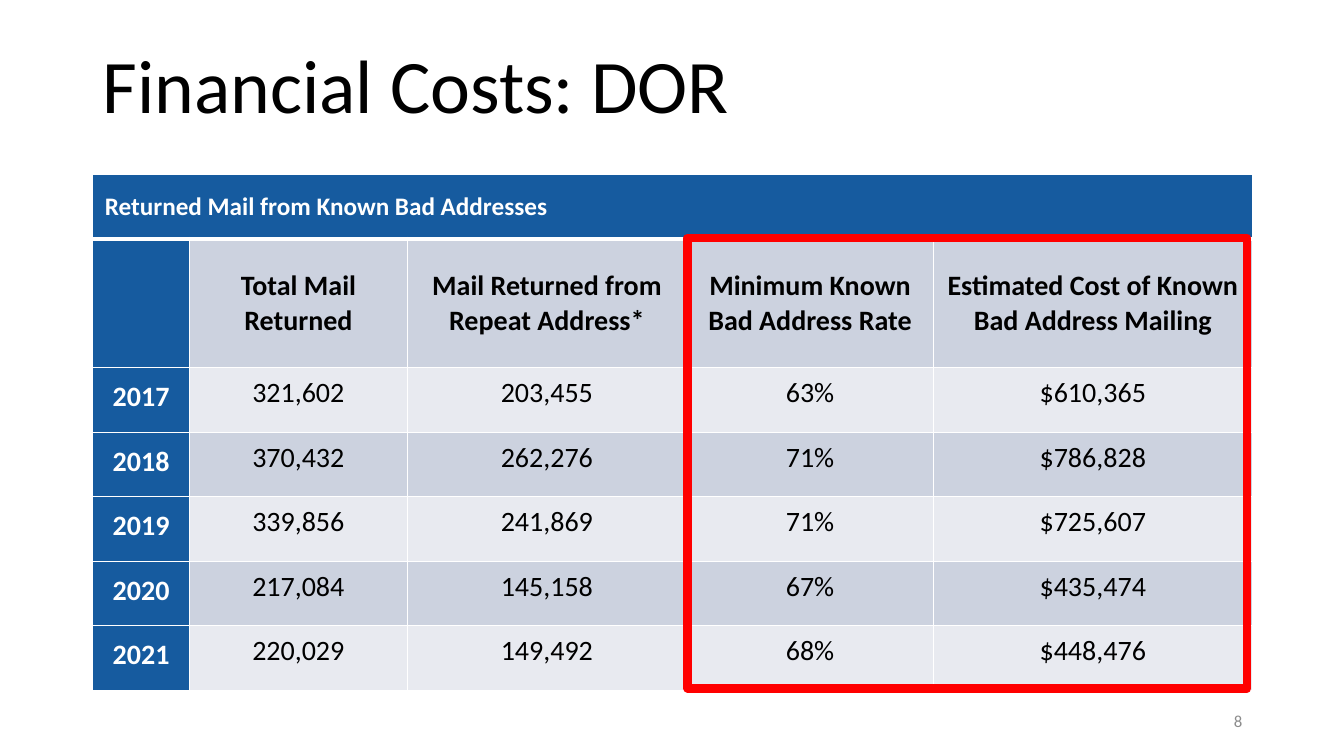
from dataclasses import dataclass

from lxml.etree import SubElement
from pptx import Presentation
from pptx.dml.color import RGBColor
from pptx.enum.shapes import MSO_SHAPE as Preset
from pptx.enum.text import MSO_ANCHOR as Anchor, PP_ALIGN as Align
from pptx.oxml.ns import qn
from pptx.util import Pt

PX = 9144  # EMU per px, 100 px to the inch
FONT = "Calibri"
BLACK = RGBColor(0x00, 0x00, 0x00)
WHITE = RGBColor(0xFF, 0xFF, 0xFF)
GREY = RGBColor(0x8C, 0x8C, 0x8C)
BLUE = RGBColor(0x16, 0x5B, 0x9F)
DARK_BAND = RGBColor(0xCC, 0xD2, 0xDF)
LIGHT_BAND = RGBColor(0xE8, 0xEA, 0xF0)
RED = RGBColor(0xFF, 0x00, 0x00)

COLUMN_WIDTHS = [96, 216, 277, 245, 316]
ROW_HEIGHTS = [64, 128, 64, 64, 64, 64, 64]
TABLE_ROWS = [
    ["Returned Mail from Known Bad Addresses", "", "", "", ""],
    ["", "Total Mail Returned", "Mail Returned from\nRepeat Address*",
     "Minimum Known Bad Address Rate",
     "Estimated Cost of Known Bad Address Mailing"],
    ["2017", "321,602", "203,455", "63%", "$610,365"],
    ["2018", "370,432", "262,276", "71%", "$786,828"],
    ["2019", "339,856", "241,869", "71%", "$725,607"],
    ["2020", "217,084", "145,158", "67%", "$435,474"],
    ["2021", "220,029", "149,492", "68%", "$448,476"],
]


@dataclass
class TextStyle:
    size: int
    color: RGBColor
    bold: bool = False
    align: Align = Align.LEFT
    anchor: Anchor = Anchor.TOP


@dataclass
class TextBox:
    text: str
    area: tuple[int, int, int, int]
    style: TextStyle
    paragraph_format: dict


TEXT_BOXES = [
    TextBox("Financial Costs: DOR", (92, 32, 1150, 102),
            TextStyle(54, BLACK, anchor=Anchor.BOTTOM), {"line_spacing": 0.9}),
    TextBox("8", (942, 695, 300, 40),
            TextStyle(12, GREY, align=Align.RIGHT, anchor=Anchor.MIDDLE),
            {"space_after": Pt(6)}),
]


def scale(area: tuple[int, ...]) -> list[int]:
    return [length * PX for length in area]


def set_all(target, values: dict) -> None:
    for name, value in values.items():
        setattr(target, name, value)


def write_text(frame, text: str, style: TextStyle, paragraph_format: dict) -> None:
    for index, line in enumerate(text.split("\n")):
        para = frame.add_paragraph() if index else frame.paragraphs[0]
        set_all(para, {"alignment": style.align, **paragraph_format})
        span = para.add_run()
        span.text = line
        set_all(span.font, {"name": FONT, "size": Pt(style.size), "bold": style.bold})
        span.font.color.rgb = style.color


def add_text_box(page, item: TextBox) -> None:
    frame = page.shapes.add_textbox(*scale(item.area)).text_frame
    set_all(frame, {"word_wrap": True, "vertical_anchor": item.style.anchor})
    write_text(frame, item.text, item.style, item.paragraph_format)


def add_borders(cell, row: int) -> None:
    """White rules, thicker between the banner and the column headings."""
    widths = {"lnL": 1, "lnR": 1, "lnT": 3 if row == 1 else 1, "lnB": 3 if row == 0 else 1}
    properties = cell._tc.get_or_add_tcPr()
    for tag, width in widths.items():
        line = SubElement(properties, qn(f"a:{tag}"), w=str(Pt(width)))
        fill = SubElement(line, qn("a:solidFill"))
        SubElement(fill, qn("a:srgbClr"), val=str(WHITE))


def cell_style(row: int, column: int) -> TextStyle:
    if row == 0:
        return TextStyle(18, WHITE, True, Align.LEFT, Anchor.MIDDLE)
    if row == 1:
        return TextStyle(20, BLACK, True, Align.CENTER, Anchor.MIDDLE)
    if column == 0:
        return TextStyle(20, WHITE, True, Align.CENTER)
    return TextStyle(20, BLACK, False, Align.CENTER)


def cell_fill(row: int, column: int) -> RGBColor:
    if row == 0 or column == 0:
        return BLUE
    return DARK_BAND if row % 2 else LIGHT_BAND


def add_mail_table(page) -> None:
    area = (92, 173, sum(COLUMN_WIDTHS), sum(ROW_HEIGHTS))
    table = page.shapes.add_table(len(ROW_HEIGHTS), len(COLUMN_WIDTHS), *scale(area)).table
    set_all(table, {"first_row": False, "horz_banding": False})
    for column, width in zip(table.columns, COLUMN_WIDTHS):
        column.width = width * PX
    for row, height in zip(table.rows, ROW_HEIGHTS):
        row.height = height * PX
    table.cell(0, 0).merge(table.cell(0, len(COLUMN_WIDTHS) - 1))

    for row, texts in enumerate(TABLE_ROWS):
        for column, text in enumerate(texts):
            cell = table.cell(row, column)
            style = cell_style(row, column)
            inset = (12 if row < 2 or column == 0 else 8) * PX
            sides = ("left", "top", "right", "bottom")
            set_all(cell, {f"margin_{side}": inset for side in sides})
            cell.vertical_anchor = style.anchor
            add_borders(cell, row)
            cell.fill.solid()
            cell.fill.fore_color.rgb = cell_fill(row, column)
            if text:
                write_text(cell.text_frame, text, style, {})


def add_highlight(page) -> None:
    frame = page.shapes.add_shape(Preset.RECTANGLE, *scale((682, 236, 555, 447)))
    frame.shadow.inherit = False
    frame.fill.background()
    frame.line.color.rgb = RED
    frame.line.width = Pt(6)


def main() -> None:
    deck = Presentation()
    set_all(deck, {"slide_width": 1333 * PX, "slide_height": 750 * PX})
    page = deck.slides.add_slide(deck.slide_layouts[6])

    # Title and page number
    for item in TEXT_BOXES:
        add_text_box(page, item)

    # Returned mail by year, with the cost columns outlined
    add_mail_table(page)
    add_highlight(page)

    deck.save("out.pptx")


if __name__ == "__main__":
    main()
